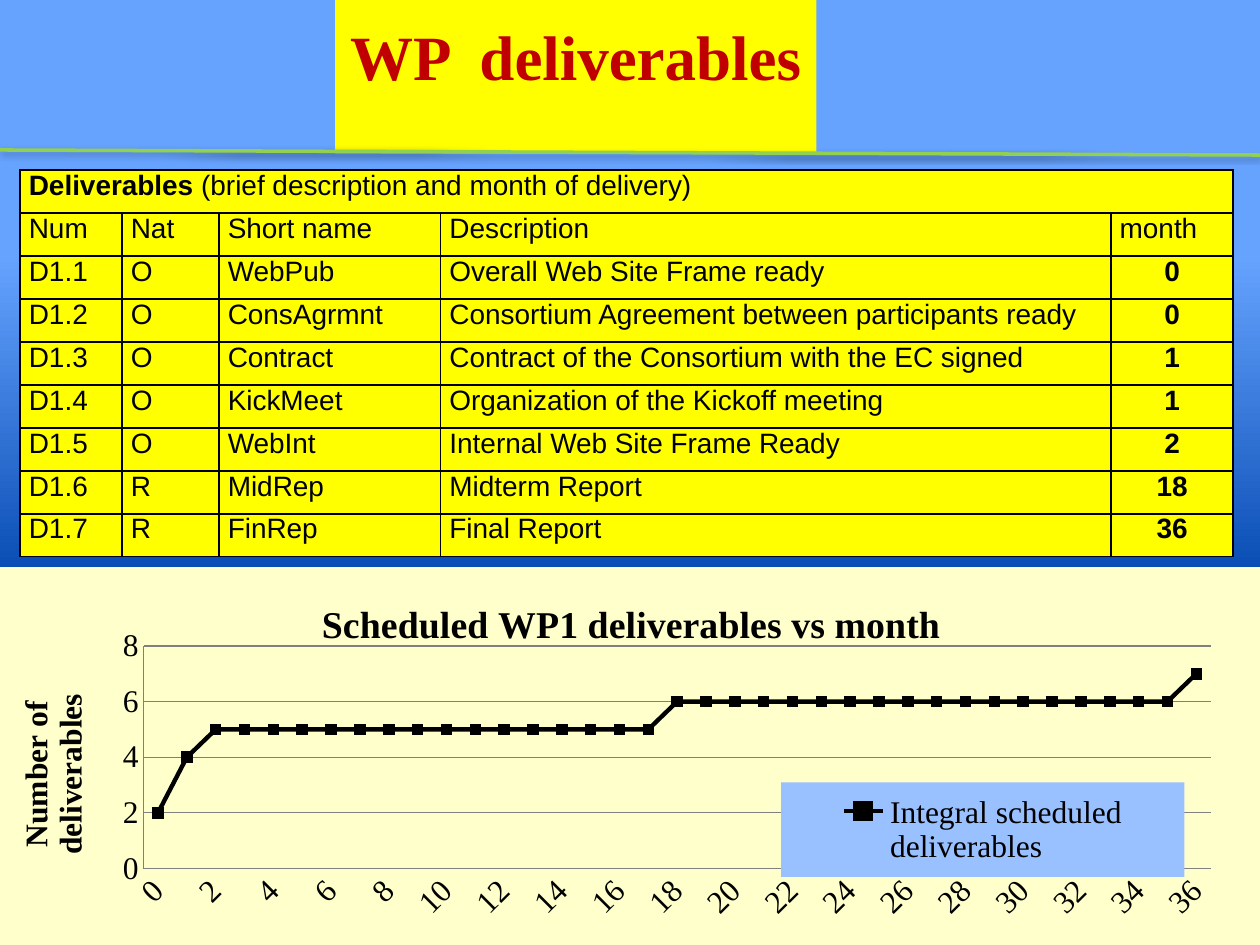
"""Build the work package deliverables slide with its table and schedule chart."""
from copy import deepcopy
from dataclasses import dataclass

from lxml import etree
from pptx import Presentation
from pptx import util as u
from pptx.chart import data as chart_data
from pptx.dml.color import RGBColor
from pptx.enum import chart as charts, shapes, text
from pptx.oxml import ns, parse_xml

Pt = u.Pt
YELLOW, BLACK, GREY = "FFFF00", "000000", "808080"
SERIF, SANS = "Times New Roman", "Arial"
COLUMN_WIDTHS = (58.3, 55.4, 126.7, 383, 69.8)
ROW_HEIGHT = 24.56
HEADINGS = ("Num", "Nat", "Short name", "Description", "month")
GRADIENT = ((0.27, "66A3FF"), (0.64, "0045AD"), (1, "002060"))


@dataclass(frozen=True)
class Deliverable:
    number: str
    nature: str
    name: str
    description: str
    month: int


@dataclass(frozen=True)
class Box:
    left: float
    top: float
    width: float
    height: float

    def lengths(self) -> tuple:
        return tuple(Pt(value) for value in (self.left, self.top, self.width, self.height))


DELIVERABLES = (
    Deliverable("D1.1", "O", "WebPub", "Overall Web Site Frame ready", 0),
    Deliverable("D1.2", "O", "ConsAgrmnt", "Consortium Agreement between participants ready", 0),
    Deliverable("D1.3", "O", "Contract", "Contract of the Consortium with the EC signed", 1),
    Deliverable("D1.4", "O", "KickMeet", "Organization of the Kickoff meeting", 1),
    Deliverable("D1.5", "O", "WebInt", "Internal Web Site Frame Ready", 2),
    Deliverable("D1.6", "R", "MidRep", "Midterm Report", 18),
    Deliverable("D1.7", "R", "FinRep", "Final Report", 36),
)


def color(value: str) -> RGBColor:
    return RGBColor.from_string(value)


def paint(fill, value: str) -> None:
    fill.solid()
    fill.fore_color.rgb = color(value)


def style(font, name: str, size: float, value: str = BLACK, bold: bool = False) -> None:
    font.name, font.size, font.bold = name, Pt(size), bold
    font.color.rgb = color(value)


def add_background(slide) -> None:
    fill = slide.background.fill
    fill.gradient()
    fill.gradient_angle = 270
    stop_list = next(slide.element.iter(ns.qn("a:gsLst")))
    stop_list.append(deepcopy(stop_list[-1]))
    for stop, (position, value) in zip(fill.gradient_stops, GRADIENT):
        stop.position = position
        stop.color.rgb = color(value)


def add_divider(slide) -> None:
    line = slide.shapes.add_connector(
        shapes.MSO_CONNECTOR.STRAIGHT, Pt(720), Pt(88.6), Pt(0), Pt(85.7))
    line.line.color.rgb = color("92D050")
    line.line.width = Pt(2)
    line._element.spPr.append(parse_xml(
        f'<a:effectLst {ns.nsdecls("a")}><a:outerShdw blurRad="{Pt(3.1)}" dist="{Pt(1.6)}" '
        'dir="5400000" rotWithShape="0"><a:srgbClr val="000000"><a:alpha val="38000"/>'
        '</a:srgbClr></a:outerShdw></a:effectLst>'))


def add_title(slide, box: Box) -> None:
    title = slide.shapes.title
    title.left, title.top, title.width, title.height = box.lengths()
    paint(title.fill, YELLOW)
    frame = title.text_frame
    frame.text = "WP  deliverables"
    frame.word_wrap = False
    frame.auto_size = text.MSO_AUTO_SIZE.SHAPE_TO_FIT_TEXT
    paragraph = frame.paragraphs[0]
    paragraph.alignment = text.PP_ALIGN.CENTER
    style(paragraph.runs[0].font, SERIF, 36, "C00000", True)


def format_cell(cell) -> None:
    cell.margin_left = cell.margin_right = Pt(5)
    cell.margin_top = cell.margin_bottom = 0
    paint(cell.fill, YELLOW)
    properties = cell._tc.get_or_add_tcPr()
    for index, side in enumerate(("lnL", "lnR", "lnT", "lnB")):
        properties.insert(index, parse_xml(
            f'<a:{side} {ns.nsdecls("a")} w="{Pt(1)}"><a:solidFill>'
            f'<a:srgbClr val="{BLACK}"/></a:solidFill></a:{side}>'))


def fill_cell(cell, value: str, bold: bool) -> None:
    cell.text_frame.text = value
    paragraph = cell.text_frame.paragraphs[0]
    paragraph.alignment = text.PP_ALIGN.CENTER if bold else text.PP_ALIGN.LEFT
    style(paragraph.runs[0].font, SANS, 16, bold=bold)


def add_deliverables_table(slide, left: float, top: float) -> None:
    row_count = len(DELIVERABLES) + 2
    box = Box(left, top, sum(COLUMN_WIDTHS), ROW_HEIGHT * row_count)
    table = slide.shapes.add_table(row_count, len(HEADINGS), *box.lengths()).table
    for column, width in zip(table.columns, COLUMN_WIDTHS):
        column.width = Pt(width)
    for row in table.rows:
        row.height = Pt(ROW_HEIGHT)
    for cell in table.iter_cells():
        format_cell(cell)
    heading = table.cell(0, 0)
    heading.merge(table.cell(0, len(HEADINGS) - 1))
    fill_cell(heading, "Deliverables ", False)
    paragraph = heading.text_frame.paragraphs[0]
    paragraph.runs[0].font.bold = True
    run = paragraph.add_run()
    run.text = "(brief description and month of delivery)"
    style(run.font, SANS, 16)
    for column, value in enumerate(HEADINGS):
        fill_cell(table.cell(1, column), value, False)
    for row, item in enumerate(DELIVERABLES, 2):
        values = (item.number, item.nature, item.name, item.description, str(item.month))
        for column, value in enumerate(values):
            fill_cell(table.cell(row, column), value, column == len(values) - 1)


def place(parent, following: str, inner: bool = False, **position: float) -> None:
    """Give a chart part a manual layout, set ahead of the named child."""
    for layout in parent.findall(ns.qn("c:layout")):
        parent.remove(layout)
    layout = etree.Element(ns.qn("c:layout"))
    manual = etree.SubElement(layout, ns.qn("c:manualLayout"))
    if inner:
        etree.SubElement(manual, ns.qn("c:layoutTarget")).set("val", "inner")
    for key in ("xMode", "yMode"):
        etree.SubElement(manual, ns.qn(f"c:{key}")).set("val", "edge")
    for key, value in position.items():
        etree.SubElement(manual, ns.qn(f"c:{key}")).set("val", str(value))
    parent.find(ns.qn(following)).addprevious(layout)


def solid_properties(value: str):
    return parse_xml(f'<c:spPr {ns.nsdecls("c", "a")}><a:solidFill><a:srgbClr val="{value}"/>'
                     '</a:solidFill><a:ln><a:noFill/></a:ln></c:spPr>')


def set_chart_title(owner, value: str, size: float) -> None:
    frame = owner.text_frame
    frame.text = value
    style(frame.paragraphs[0].runs[0].font, SERIF, size, bold=True)


def add_schedule_chart(slide, box: Box) -> None:
    months = range(max(item.month for item in DELIVERABLES) + 1)
    data = chart_data.CategoryChartData()
    data.categories = [str(month) for month in months]
    data.add_series("Integral scheduled deliverables",
                    [sum(item.month <= month for item in DELIVERABLES) for month in months])
    chart = slide.shapes.add_chart(
        charts.XL_CHART_TYPE.LINE_MARKERS, *box.lengths(), data).chart
    style(chart.font, SERIF, 18)
    chart.element.find(ns.qn("c:chart")).addnext(solid_properties("FFFFCC"))
    set_chart_title(chart.chart_title, "Scheduled WP1 deliverables vs month", 21.6)
    place(chart.chart_title._element, "c:overlay", x=0.25, y=0.07)
    place(chart.element.chart.plotArea, "c:lineChart", True, x=0.114, y=0.209, w=0.847, h=0.589)

    chart.has_legend = True
    chart.legend.position = charts.XL_LEGEND_POSITION.RIGHT
    chart.legend.include_in_layout = False
    legend = chart.legend._element
    place(legend, "c:overlay", x=0.62, y=0.57, w=0.32, h=0.25)
    legend.find(ns.qn("c:overlay")).addnext(solid_properties("99C0FF"))

    plot = chart.plots[0]
    plot.vary_by_categories = False
    series = plot.series[0]
    series.smooth = False
    series.format.line.color.rgb = color(BLACK)
    series.format.line.width = Pt(2.5)
    series.marker.style = charts.XL_MARKER_STYLE.SQUARE
    series.marker.size = 6
    paint(series.marker.format.fill, BLACK)
    series.marker.format.line.color.rgb = color(BLACK)

    months_axis, count_axis = chart.category_axis, chart.value_axis
    for axis in (months_axis, count_axis):
        axis.major_tick_mark = axis.minor_tick_mark = charts.XL_TICK_MARK.NONE
        axis.format.line.color.rgb = color(GREY)
        style(axis.tick_labels.font, SERIF, 18)
    axis_element = months_axis._element
    axis_element.find(ns.qn("c:txPr")).find(ns.qn("a:bodyPr")).set("rot", "-2700000")
    skip = etree.Element(ns.qn("c:tickLblSkip"))
    skip.set("val", "2")
    axis_element.find(ns.qn("c:noMultiLvlLbl")).addprevious(skip)
    count_axis.minimum_scale, count_axis.maximum_scale, count_axis.major_unit = 0, 8, 2
    count_axis.major_gridlines.format.line.color.rgb = color(GREY)
    set_chart_title(count_axis.axis_title, "Number of deliverables", 18)


def main() -> None:
    presentation = Presentation()
    presentation.slide_width, presentation.slide_height = Pt(720), Pt(540)
    slide = presentation.slides.add_slide(presentation.slide_layouts[5])
    add_background(slide)
    add_divider(slide)
    add_title(slide, Box(191.5, 5.8, 275, 51))
    add_deliverables_table(slide, 11.5, 97.2)
    add_schedule_chart(slide, Box(0, 324, 720, 216))
    presentation.save("out.pptx")


if __name__ == "__main__":
    main()
